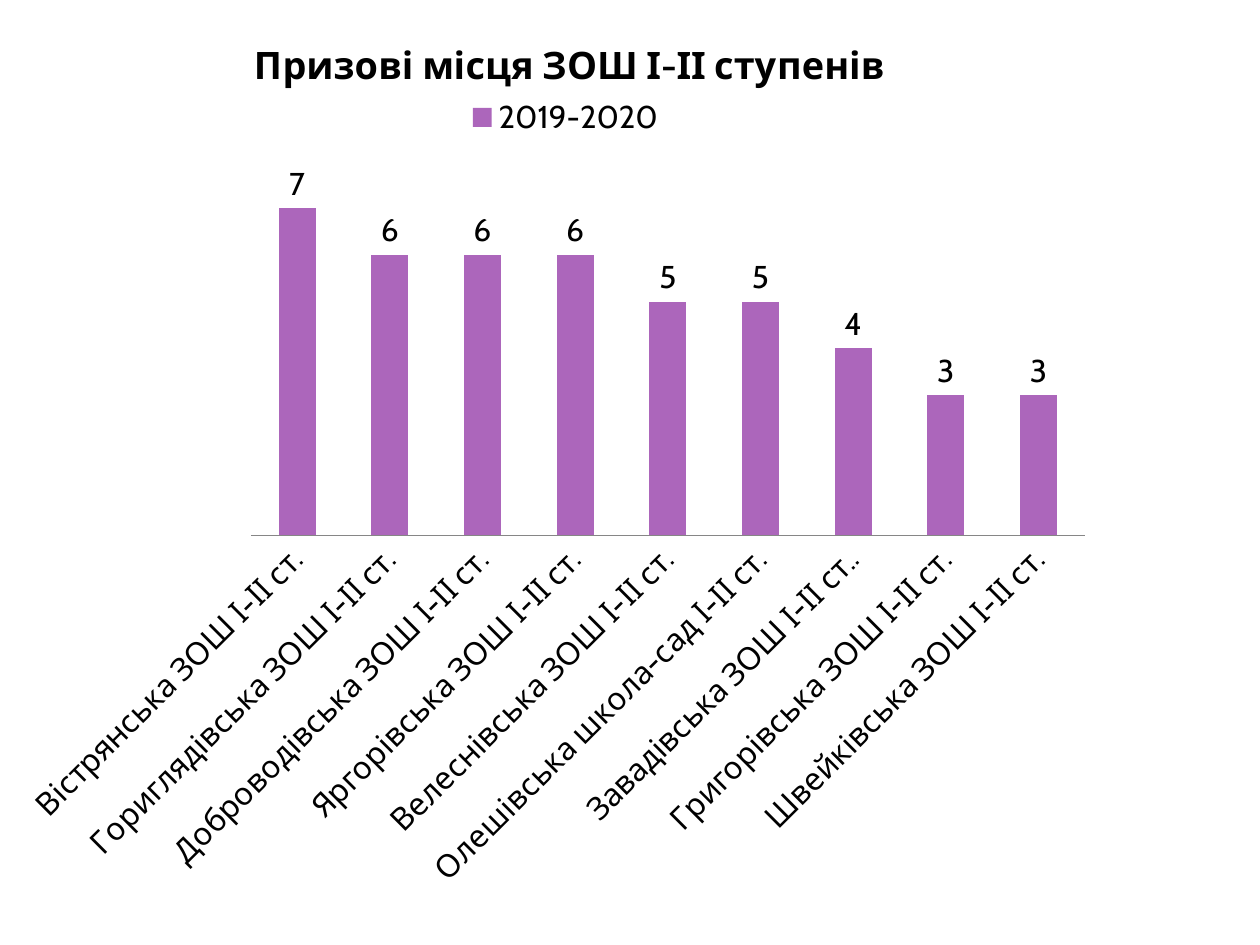
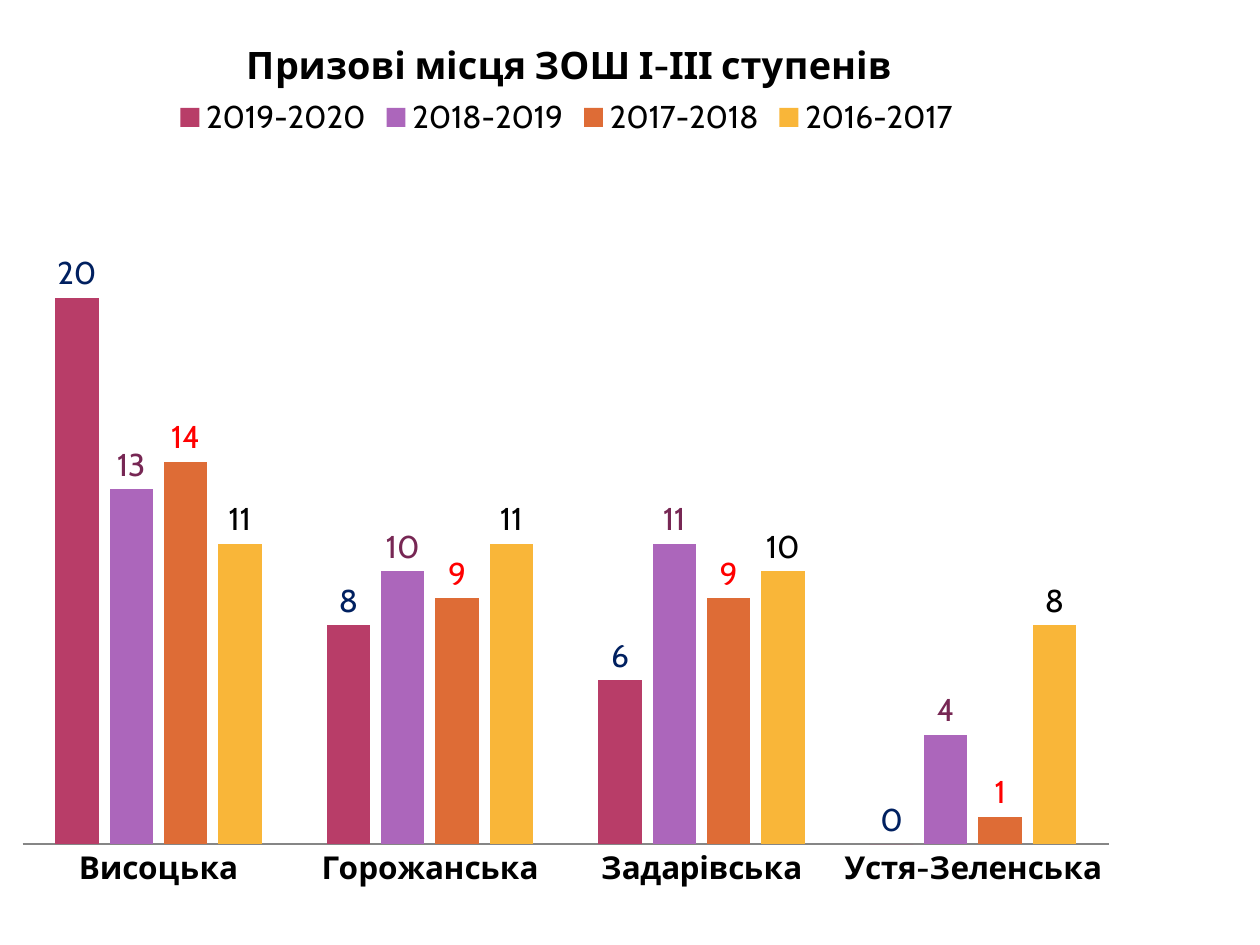
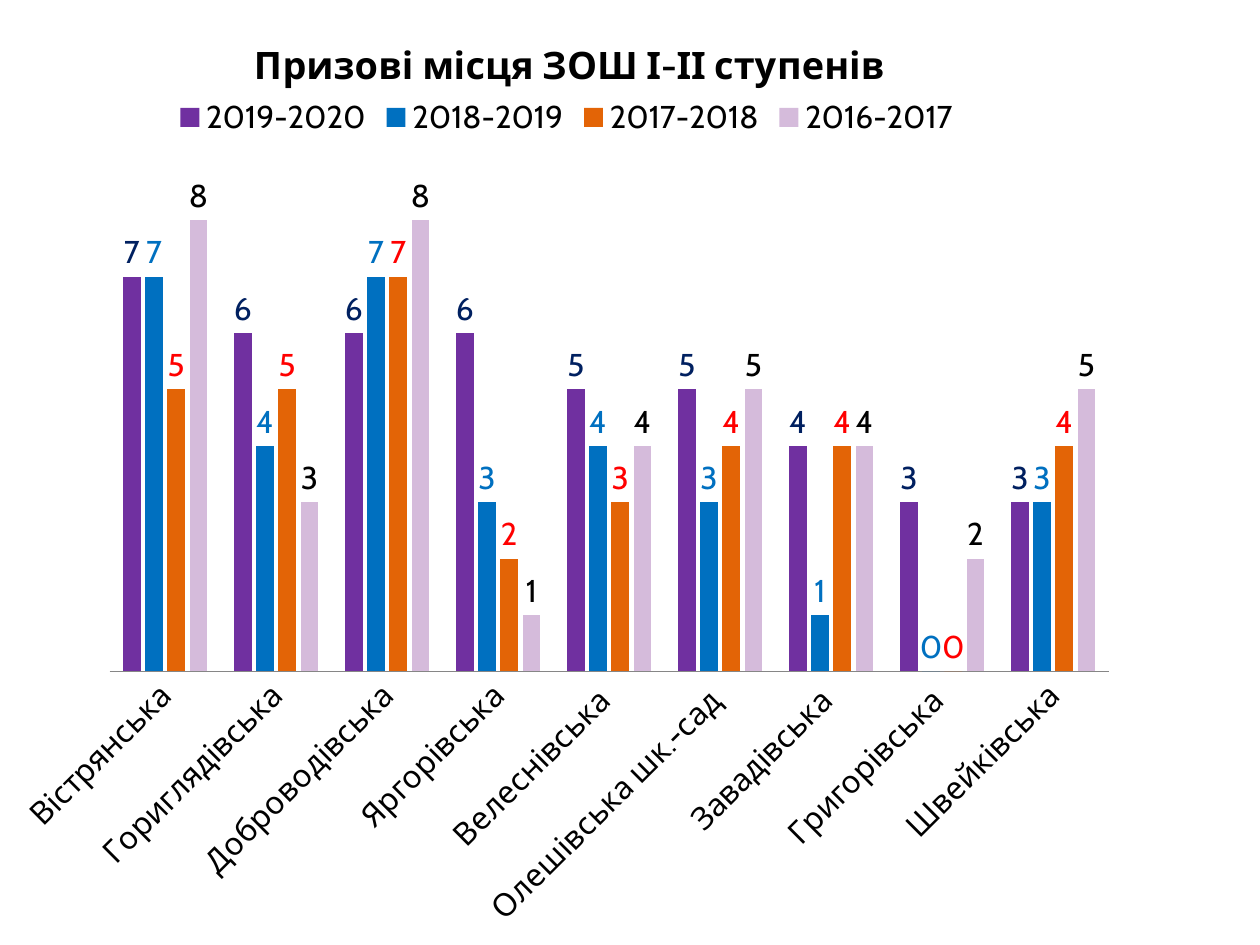
import pptx
import pptx.chart.data
import pptx.dml.color
import pptx.enum.chart
import pptx.oxml
import pptx.oxml.ns
import pptx.util
from dataclasses import dataclass

Inches = pptx.util.Inches
Pt = pptx.util.Pt


@dataclass(frozen=True)
class Theme:
    font: str = "Cabin"
    text_size: float = 18
    title_size: float = 21.6
    text: str = "000000"
    axis: str = "868686"
    rose: str = "B83D68"
    violet: str = "AC66BB"
    orange: str = "DE6C36"
    amber: str = "F9B639"
    purple: str = "7030A0"
    blue: str = "0070C0"
    pumpkin: str = "E36406"
    lilac: str = "D5BBDB"
    navy: str = "002060"
    plum: str = "772754"
    red: str = "FF0000"


THEME = Theme()
GAP_WIDTH = 150
OVERLAP = -25
TITLE_TOP = 0.25
LEGEND_TOP = 0.73

PRIZE_CHARTS = [
    {
        "title": "Призові місця ЗОШ І-ІІ ступенів",
        "frame": (0.12, 0, 8.74, 7.19),
        "title_left": 1.96,
        "legend_left": 3.67,
        "plot": (1.99, 1.28, 6.62, 2.97),
        "top_value": 8,
        "slanted": True,
        "bold_schools": False,
        "schools": [
            "Вістрянська ЗОШ І-ІІ ст.", "Гориглядівська ЗОШ І-ІІ ст.",
            "Доброводівська ЗОШ І-ІІ ст.", "Яргорівська ЗОШ І-ІІ ст.",
            "Велеснівська ЗОШ І-ІІ ст.", "Олешівська школа-сад І-ІІ ст.",
            "Завадівська ЗОШ І-ІІ ст..", "Григорівська ЗОШ І-ІІ ст.",
            "Швейківська ЗОШ І-ІІ ст.",
        ],
        "years": [
            ("2019-2020", [7, 6, 6, 6, 5, 5, 4, 3, 3], THEME.violet, THEME.text),
        ],
    },
    {
        "title": "Призові місця ЗОШ І-ІІІ ступенів",
        "frame": (0, 0, 8.98, 7.19),
        "title_left": 1.9,
        "legend_left": 1.35,
        "plot": (0.18, 1.28, 8.62, 5.42),
        "top_value": 25,
        "slanted": False,
        "bold_schools": True,
        "schools": ["Висоцька", "Горожанська", "Задарівська", "Устя-Зеленська"],
        "years": [
            ("2019-2020", [20, 8, 6, 0], THEME.rose, THEME.navy),
            ("2018-2019", [13, 10, 11, 4], THEME.violet, THEME.plum),
            ("2017-2018", [14, 9, 9, 1], THEME.orange, THEME.red),
            ("2016-2017", [11, 11, 10, 8], THEME.amber, THEME.text),
        ],
    },
    {
        "title": "Призові місця ЗОШ І-ІІ ступенів",
        "frame": (0, 0, 8.98, 7.5),
        "title_left": 1.96,
        "legend_left": 1.35,
        "plot": (0.87, 1.3, 7.93, 4.03),
        "top_value": 9,
        "slanted": True,
        "bold_schools": False,
        "schools": [
            "Вістрянська", "Гориглядівська", "Доброводівська", "Яргорівська",
            "Велеснівська ", "Олешівська шк.-сад ", "Завадівська ",
            "Григорівська ", "Швейківська",
        ],
        "years": [
            ("2019-2020", [7, 6, 6, 6, 5, 5, 4, 3, 3], THEME.purple, THEME.navy),
            ("2018-2019", [7, 4, 7, 3, 4, 3, 1, 0, 3], THEME.blue, THEME.blue),
            ("2017-2018", [5, 5, 7, 2, 3, 4, 4, 0, 4], THEME.pumpkin, THEME.red),
            ("2016-2017", [8, 3, 8, 1, 4, 5, 4, 2, 5], THEME.lilac, THEME.text),
        ],
    },
]


def rgb(code):
    return pptx.dml.color.RGBColor.from_string(code)


def style_font(font, color=THEME.text, size=THEME.text_size, bold=False):
    font.name = THEME.font
    font.size = Pt(size)
    font.bold = bold
    font.color.rgb = rgb(color)


def place_part(chart, part, index, box, frame):
    left, top, width, height = frame
    fractions = [(box[0] - left) / width, (box[1] - top) / height]
    settings = [("xMode", "edge"), ("yMode", "edge")]
    if len(box) == 4:
        settings.insert(0, ("layoutTarget", "inner"))
        fractions += [box[2] / width, box[3] / height]
    settings += zip("xywh", fractions)
    values = "".join(f'<c:{key} val="{value}"/>' for key, value in settings)
    layout = pptx.oxml.parse_xml(
        f'<c:layout {pptx.oxml.ns.nsdecls("c")}>'
        f"<c:manualLayout>{values}</c:manualLayout></c:layout>"
    )
    holder = chart.element.xpath(f"c:chart/c:{part}")[0]
    for automatic in holder.xpath("c:layout"):
        holder.remove(automatic)
    holder.insert(index, layout)


def place_parts(chart, content):
    frame = content["frame"]
    place_part(chart, "title", 1, (content["title_left"], TITLE_TOP), frame)
    place_part(chart, "legend", 1, (content["legend_left"], LEGEND_TOP), frame)
    place_part(chart, "plotArea", 0, content["plot"], frame)


def add_heading(chart, heading):
    chart.has_title = True
    run = chart.chart_title.text_frame.paragraphs[0].add_run()
    run.text = heading
    style_font(run.font, size=THEME.title_size, bold=True)


def add_legend(chart):
    chart.has_legend = True
    chart.legend.position = pptx.enum.chart.XL_LEGEND_POSITION.TOP
    chart.legend.include_in_layout = False
    style_font(chart.legend.font)


def style_axes(chart, content):
    schools = chart.category_axis
    schools.major_tick_mark = pptx.enum.chart.XL_TICK_MARK.NONE
    schools.format.line.color.rgb = rgb(THEME.axis)
    style_font(schools.tick_labels.font, bold=content["bold_schools"])
    if content["slanted"]:
        label_body = chart.element.xpath(".//c:catAx/c:txPr/a:bodyPr")[0]
        label_body.set("rot", str(-45 * 60000))
        label_body.set("vert", "horz")

    places = chart.value_axis
    places.minimum_scale = 0
    places.maximum_scale = content["top_value"]
    places.has_major_gridlines = False
    places.visible = False


def style_years(chart, years):
    plot = chart.plots[0]
    plot.gap_width = GAP_WIDTH
    plot.overlap = OVERLAP
    plot.vary_by_categories = False
    for year, (_, _, fill_color, label_color) in zip(plot.series, years):
        year.invert_if_negative = False
        year.format.fill.solid()
        year.format.fill.fore_color.rgb = rgb(fill_color)
        labels = year.data_labels
        labels.show_value = True
        labels.position = pptx.enum.chart.XL_LABEL_POSITION.OUTSIDE_END
        style_font(labels.font, label_color)


def add_prize_slide(deck, content):
    slide = deck.slides.add_slide(deck.slide_layouts[6])
    prizes = pptx.chart.data.CategoryChartData()
    prizes.categories = content["schools"]
    for name, places, _, _ in content["years"]:
        prizes.add_series(name, places)
    chart = slide.shapes.add_chart(
        pptx.enum.chart.XL_CHART_TYPE.COLUMN_CLUSTERED,
        *map(Inches, content["frame"]), prizes,
    ).chart
    style_font(chart.font)
    add_heading(chart, content["title"])
    add_legend(chart)
    style_axes(chart, content)
    style_years(chart, content["years"])
    place_parts(chart, content)


def main():
    deck = pptx.Presentation()
    deck.slide_width = Inches(10)
    deck.slide_height = Inches(7.5)
    for content in PRIZE_CHARTS:
        add_prize_slide(deck, content)
    deck.save("out.pptx")


if __name__ == "__main__":
    main()
